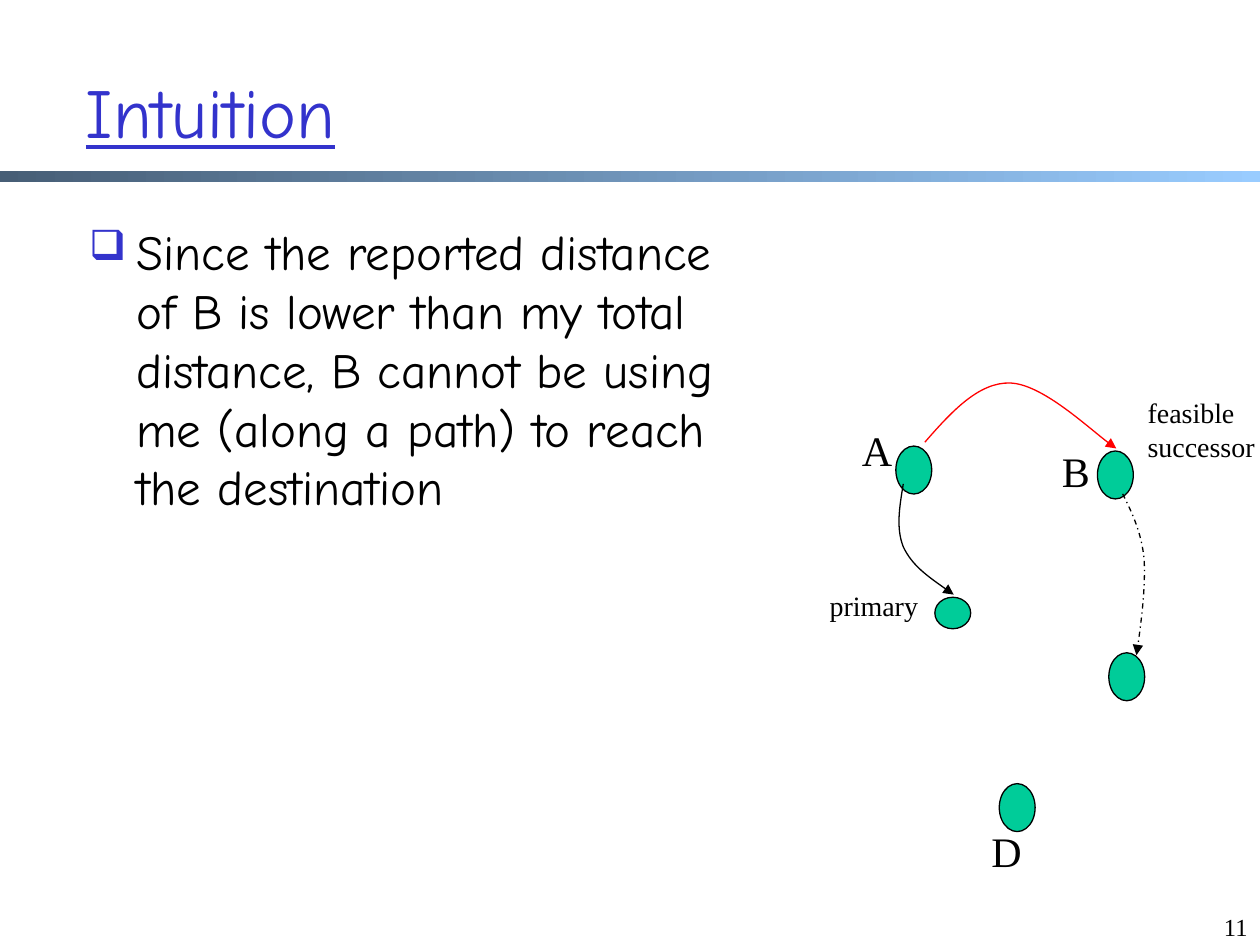
from typing import NamedTuple

from lxml.etree import SubElement
from pptx import Presentation
from pptx.dml.color import RGBColor
from pptx.enum.dml import MSO_LINE_DASH_STYLE as Dash
from pptx.enum.shapes import MSO_SHAPE as Shape
from pptx.enum.text import MSO_ANCHOR as Anchor, MSO_AUTO_SIZE as AutoSize, PP_ALIGN as Align
from pptx.oxml.ns import qn
from pptx.util import Pt

COMIC = "Comic Neue"
TIMES = "Times New Roman"
BLACK = "000000"
BLUE = "3333CC"
GREEN = "00CC99"


class Node(NamedTuple):
    x: float
    y: float
    h: float = 27.4


class Label(NamedTuple):
    text: str
    x: float
    y: float
    w: float
    h: float
    size: int
    align: Align = Align.CENTER


class Curve(NamedTuple):
    points: list[tuple[float, float]]
    color: str = BLACK
    dash: Dash | None = None


NODES = [
    Node(511.9, 254.9),
    Node(627.1, 257.7),
    Node(633.6, 373),
    Node(571, 447.8),
    Node(534.2, 341.3, 18),
]

LABELS = [
    Label("A", 485.3, 239, 31.7, 54.7, 24),
    Label("B", 599, 251.3, 31.7, 36, 24),
    Label("D", 559.4, 468, 31.7, 36, 24),
    Label("feasible successor", 648.7, 222.5, 85.7, 69.8, 16, Align.LEFT),
    Label("primary", 456.5, 332.6, 85.7, 26.6, 16),
    Label("11", 666, 517.7, 54, 22.3, 14, Align.RIGHT),
]

CURVES = [
    Curve([(528.5, 252.7), (543.6, 235.4), (559.4, 218.2), (577.4, 218.9),
           (595.4, 219.6), (627.8, 249.8), (637.9, 256.3)], "FF0000"),
    Curve([(641.5, 282.2), (647.3, 293.8), (652.3, 304.6), (653.8, 319.7),
           (654.5, 334.8), (652.3, 355), (649.4, 374.4)], BLACK, Dash.DASH_DOT),
    Curve([(516.2, 276.5), (514.1, 289.4), (511.9, 301.7), (516.2, 312.5),
           (521.3, 323.3), (532.8, 331.2), (545, 339.8)]),
]


def rgb(color: str) -> RGBColor:
    return RGBColor.from_string(color)


def place(sp, x: float, y: float, w: float, h: float) -> None:
    sp.left, sp.top, sp.width, sp.height = Pt(x), Pt(y), Pt(w), Pt(h)


def write(tf, text: str, *, size: int, font: str = TIMES, color: str = BLACK,
          align: Align = Align.LEFT, anchor: Anchor = Anchor.TOP, underline: bool | None = None):
    tf.word_wrap = True
    tf.auto_size = AutoSize.NONE
    tf.vertical_anchor = anchor
    p = tf.paragraphs[0]
    p.alignment = align
    r = p.add_run()
    r.text = text
    r.font.name = font
    r.font.size = Pt(size)
    r.font.underline = underline
    r.font.color.rgb = rgb(color)
    return p


def add_bullet(p, char: str, color: str, percent: int, indent: float) -> None:
    pPr = p._p.get_or_add_pPr()
    pPr.set("marL", str(Pt(indent)))
    pPr.set("indent", str(-Pt(indent)))
    SubElement(SubElement(pPr, qn("a:buClr")), qn("a:srgbClr"), val=color)
    SubElement(pPr, qn("a:buSzPct"), val=str(percent * 1000))
    SubElement(pPr, qn("a:buChar"), char=char)


def draw_node(s, node: Node) -> None:
    sp = s.shapes.add_shape(Shape.OVAL, Pt(node.x), Pt(node.y), Pt(20.5), Pt(node.h))
    sp.shadow.inherit = False
    sp.fill.solid()
    sp.fill.fore_color.rgb = rgb(GREEN)
    sp.line.color.rgb = rgb(BLACK)
    sp.line.width = Pt(0.75)


def draw_label(s, label: Label) -> None:
    sp = s.shapes.add_textbox(Pt(label.x), Pt(label.y), Pt(label.w), Pt(label.h))
    write(sp.text_frame, label.text, size=label.size, align=label.align)


def draw_curve(s, curve: Curve) -> None:
    start, *rest = [(Pt(x), Pt(y)) for x, y in curve.points]
    builder = s.shapes.build_freeform(*start)
    builder.add_line_segments(rest, close=False)
    sp = builder.convert_to_shape()
    sp.shadow.inherit = False
    sp.fill.background()
    sp.line.color.rgb = rgb(curve.color)
    sp.line.width = Pt(0.75)
    if curve.dash is not None:
        sp.line.dash_style = curve.dash
    path = sp.element.find(".//" + qn("a:path"))
    lines = path.findall(qn("a:lnTo"))
    for i in range(0, len(lines), 3):
        bezier = SubElement(path, qn("a:cubicBezTo"))
        for line in lines[i:i + 3]:
            bezier.append(line[0])
            path.remove(line)
    ln = sp.element.spPr.find(qn("a:ln"))
    SubElement(ln, qn("a:tailEnd"), type="triangle")


def draw_rule(s) -> None:
    sp = s.shapes.add_shape(Shape.RECTANGLE, 0, Pt(97.9), Pt(720), Pt(6))
    sp.shadow.inherit = False
    sp.line.fill.background()
    sp.fill.gradient()
    sp.fill.gradient_angle = 0
    for stop, color in zip(sp.fill.gradient_stops, ("475E76", "99CCFF")):
        stop.color.rgb = rgb(color)


def main() -> None:
    prs = Presentation()
    prs.slide_width, prs.slide_height = Pt(720), Pt(540)
    s = prs.slides.add_slide(prs.slide_layouts[5])

    draw_rule(s)
    title = s.shapes.title
    place(title, 41.8, 18, 631.4, 90)
    write(title.text_frame, "Intuition", size=40, font=COMIC, color=BLUE,
          anchor=Anchor.MIDDLE, underline=True)

    body = s.shapes.add_textbox(Pt(43.9), Pt(123.1), Pt(395.3), Pt(382.3))
    p = write(body.text_frame,
              "Since the reported distance of B is lower than my total distance, "
              "B cannot be using me (along a path) to reach the destination",
              size=28, font=COMIC)
    p.space_before = Pt(5.6)
    add_bullet(p, "❑", BLUE, 85, 27)

    for node in NODES:
        draw_node(s, node)
    for curve in CURVES:
        draw_curve(s, curve)
    for label in LABELS:
        draw_label(s, label)

    prs.save("out.pptx")


if __name__ == "__main__":
    main()
